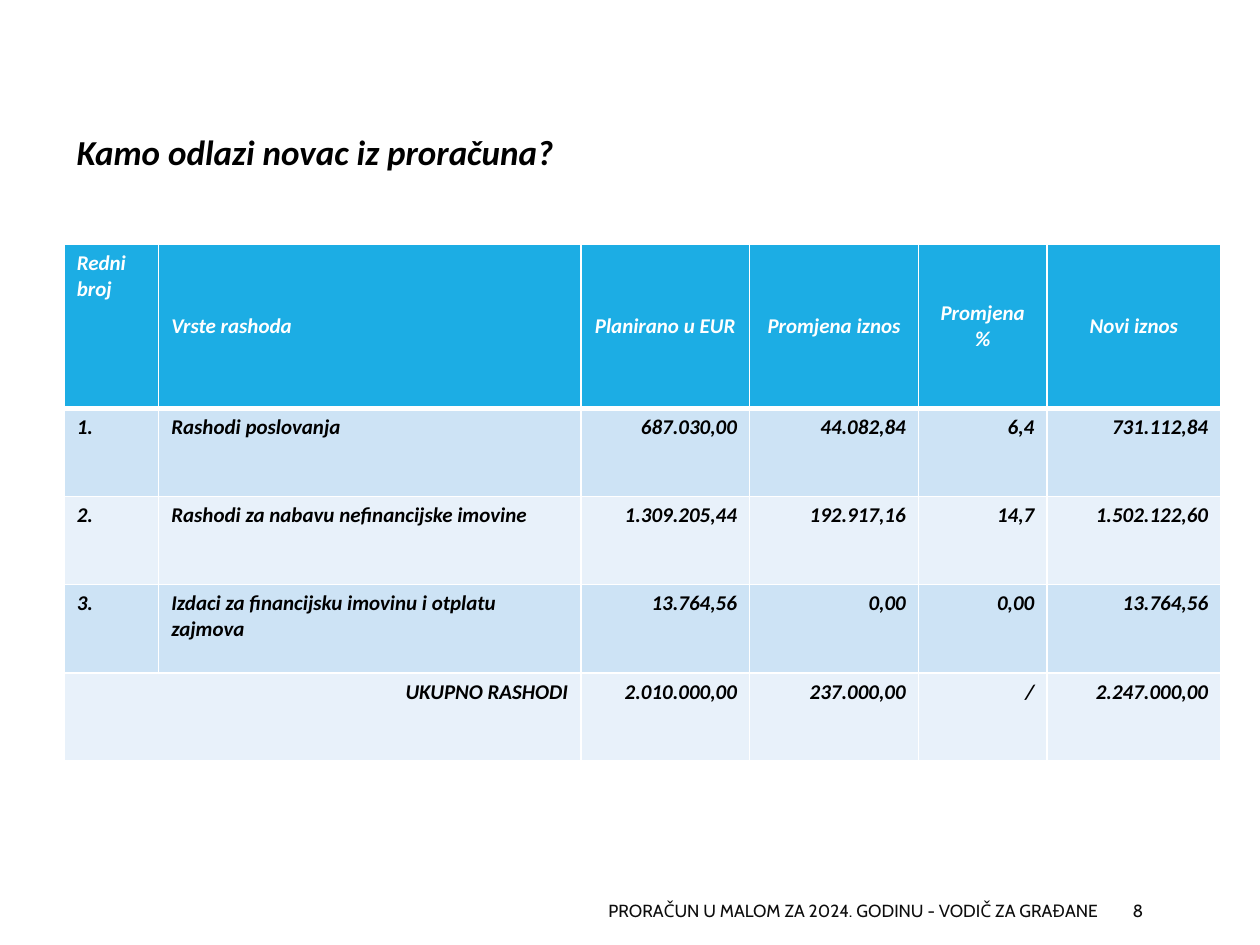
from lxml.etree import SubElement
from pptx import Presentation
from pptx.dml.color import RGBColor
from pptx.enum.text import MSO_ANCHOR, PP_ALIGN
from pptx.oxml.ns import qn
from pptx.util import Inches, Pt

# Content
TITLE = "Kamo odlazi novac iz proračuna?"
FOOTER = "PRORAČUN U MALOM ZA 2024. GODINU - VODIČ ZA GRAĐANE"
PAGE = "8"
HEAD = ["Redni broj", "Vrste rashoda", "Planirano u EUR",
        "Promjena iznos", "Promjena %", "Novi iznos"]
ROWS = [
    ["1.", "Rashodi poslovanja", "687.030,00", "44.082,84", "6,4", "731.112,84"],
    ["2.", "Rashodi za nabavu nefinancijske imovine",
     "1.309.205,44", "192.917,16", "14,7", "1.502.122,60"],
    ["3.", "Izdaci za financijsku imovinu i otplatu zajmova",
     "13.764,56", "0,00", "0,00", "13.764,56"],
]
TOTAL = ["UKUPNO RASHODI", "", "2.010.000,00", "237.000,00", "/", "2.247.000,00"]
COLS = [0.75, 3.35, 1.34, 1.34, 1.02, 1.38]
HEAD_H, ROW_H = 1.3, 0.7

THEME = {
    "body": "Calibri", "foot": "Cabin",
    "title_size": 20, "cell_size": 12, "foot_size": 10,
    "ink": "000000", "foot_ink": "0D0D0D", "white": "FFFFFF",
    "head": "1CADE4", "bands": ["CDE3F5", "E8F1FA"],
}
LEFT, MID, RIGHT = PP_ALIGN.LEFT, PP_ALIGN.CENTER, PP_ALIGN.RIGHT


def write(frame, text, face, size, ink, align=LEFT, strong=False):
    frame.text = text
    para = frame.paragraphs[0]
    para.alignment = align
    for run in para.runs:
        font = run.font
        font.name, font.size = face, Pt(size)
        font.bold = font.italic = strong
        font.color.rgb = RGBColor.from_string(ink)


def label(slide, box, text, *style, anchor=MSO_ANCHOR.TOP, **more):
    frame = slide.shapes.add_textbox(*map(Inches, box)).text_frame
    frame.word_wrap = True
    frame.vertical_anchor = anchor
    write(frame, text, *style, **more)


def edge(cell, base):
    """Draw white borders, placed ahead of the cell's fill."""
    props = cell._tc.get_or_add_tcPr()
    sides = [("L", 1), ("R", 1), ("T", 1), ("B", base)]
    for spot, (side, width) in enumerate(sides):
        line = SubElement(props, qn(f"a:ln{side}"), w=str(Pt(width)))
        fill = SubElement(line, qn("a:solidFill"))
        SubElement(fill, qn("a:srgbClr"), val=THEME["white"])
        props.insert(spot, line)


def build():
    deck = Presentation()
    deck.slide_width, deck.slide_height = Inches(10), Inches(7.5)
    slide = deck.slides.add_slide(deck.slide_layouts[6])

    # Footer and page number
    foot = (THEME["foot"], THEME["foot_size"], THEME["foot_ink"])
    label(slide, (3.97, 7.08, 4.84, 0.3), FOOTER, *foot,
          anchor=MSO_ANCHOR.MIDDLE, align=RIGHT)
    label(slide, (8.89, 7.08, 0.8, 0.3), PAGE, *foot, anchor=MSO_ANCHOR.MIDDLE)

    # Title
    label(slide, (0.51, 0.99, 4.72, 0.44), TITLE, THEME["body"],
          THEME["title_size"], THEME["ink"], strong=True)

    # Table of expenses
    data = [HEAD, *ROWS, TOTAL]
    last = len(data) - 1
    high = HEAD_H + ROW_H * last
    grid = slide.shapes.add_table(
        len(data), len(COLS), Inches(0.51), Inches(1.94),
        Inches(sum(COLS)), Inches(high)).table
    for col, width in zip(grid.columns, COLS):
        col.width = Inches(width)

    for r, row in enumerate(data):
        top = r == 0
        grid.rows[r].height = Inches(HEAD_H if top else ROW_H)
        tint = THEME["head"] if top else THEME["bands"][(r - 1) % 2]
        ink = THEME["white"] if top else THEME["ink"]
        for c, text in enumerate(row):
            cell = grid.cell(r, c)
            cell.fill.solid()
            cell.fill.fore_color.rgb = RGBColor.from_string(tint)
            edge(cell, 3 if top else 1)
            if top and c > 0:
                cell.vertical_anchor = MSO_ANCHOR.MIDDLE
            align = LEFT if c < 2 and r < last else MID if top else RIGHT
            write(cell.text_frame, text, THEME["body"], THEME["cell_size"],
                  ink, align, strong=True)
    grid.cell(last, 0).merge(grid.cell(last, 1))

    deck.save("out.pptx")


if __name__ == "__main__":
    build()
